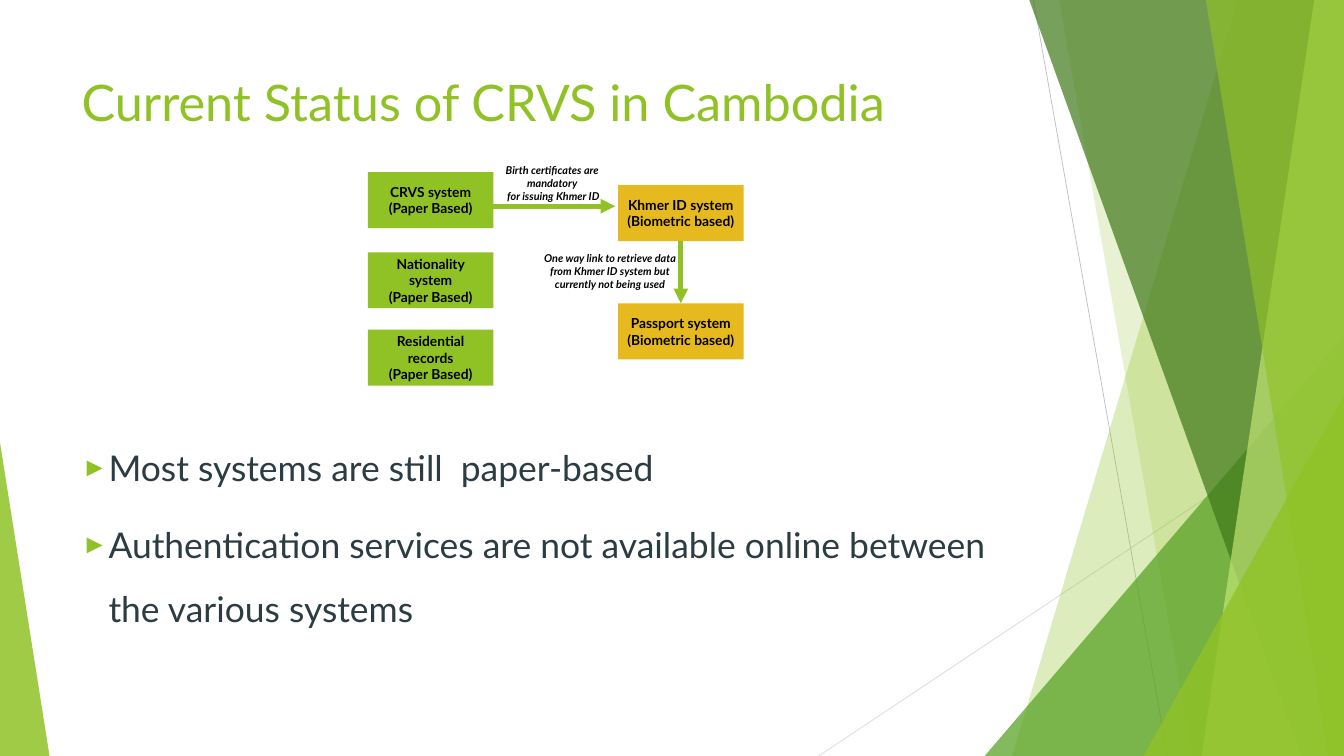
"""Build the slide on the current status of civil registration in Cambodia."""
from dataclasses import dataclass
from lxml import etree
from pptx import Presentation
from pptx import util as u
from pptx.dml.color import RGBColor
from pptx.enum import shapes, text
from pptx.oxml.ns import qn


@dataclass(frozen=True)
class Theme:
    font: str = "Lato"
    green: str = "90C226"
    leaf: str = "54A021"
    moss: str = "3F7819"
    lime: str = "C0E474"
    gold: str = "E6B91E"
    slate: str = "2C3C43"
    black: str = "000000"
    grey: str = "BFBFBF"
    pale: str = "D9D9D9"
    head: float = 51.2
    body: float = 36
    label: float = 14
    note: float = 11
    hair: float = 0.75
    bold: float = 5


class Deck:
    COLS, ROWS = 96, 54

    def __init__(self, deck, theme):
        self.deck, self.theme = deck, theme
        self.slide = deck.slides.add_slide(deck.slide_layouts[1])
        self.items = self.slide.shapes

    def x(self, cols):
        return round(self.deck.slide_width * cols / self.COLS)

    def y(self, rows):
        return round(self.deck.slide_height * rows / self.ROWS)

    def area(self, left, top, width, height):
        return self.x(left), self.y(top), self.x(width), self.y(height)

    def paint(self, shape, tint, alpha=100):
        shape.shadow.inherit = False
        shape.fill.solid()
        shape.fill.fore_color.rgb = RGBColor.from_string(tint)
        shape.line.fill.background()
        if alpha < 100:
            color = shape.fill._xPr.find(".//" + qn("a:srgbClr"))
            etree.SubElement(color, qn("a:alpha"), val=str(alpha * 1000))

    def letter(self, frame, lines, size, tint, align, anchor, bold=False, italic=False):
        frame.word_wrap = True
        frame.auto_size = text.MSO_AUTO_SIZE.NONE
        frame.vertical_anchor = anchor
        for i, line in enumerate(lines):
            para = frame.add_paragraph() if i else frame.paragraphs[0]
            para.alignment = align
            run = para.add_run()
            run.text = line
            font = run.font
            font.name, font.size = self.theme.font, u.Pt(size)
            font.bold, font.italic = bold, italic
            font.color.rgb = RGBColor.from_string(tint)

    def fan(self, top, foot, tint, alpha):
        build = self.items.build_freeform(self.x(top), 0)
        right, base = self.x(self.COLS), self.y(self.ROWS)
        build.add_line_segments([(right, 0), (right, base), (self.x(foot), base)])
        self.paint(build.convert_to_shape(), tint, alpha)

    def wedge(self, left, top, width, peak, tint, alpha):
        kind = shapes.MSO_SHAPE.ISOSCELES_TRIANGLE
        shape = self.items.add_shape(kind, *self.area(left, top, width, self.ROWS - top))
        shape.adjustments[0] = peak
        self.paint(shape, tint, alpha)

    def line(self, start, end, tint, width, arrow=False):
        ends = self.x(start[0]), self.y(start[1]), self.x(end[0]), self.y(end[1])
        link = self.items.add_connector(shapes.MSO_CONNECTOR.STRAIGHT, *ends)
        link.line.color.rgb = RGBColor.from_string(tint)
        link.line.width = u.Pt(width)
        if arrow:
            etree.SubElement(link.line._get_or_add_ln(), qn("a:tailEnd"), type="triangle")
        etree.SubElement(link._element.spPr, qn("a:effectLst"))
        return link

    def box(self, left, top, lines, tint):
        kind = shapes.MSO_SHAPE.RECTANGLE
        shape = self.items.add_shape(kind, *self.area(left, top, 8.96, 4))
        self.paint(shape, tint)
        self.letter(shape.text_frame, lines, self.theme.label, self.theme.black,
                    text.PP_ALIGN.CENTER, text.MSO_ANCHOR.MIDDLE, bold=True)
        return shape

    def note(self, area, lines):
        shape = self.items.add_textbox(*self.area(*area))
        self.letter(shape.text_frame, lines, self.theme.note, self.theme.black,
                    text.PP_ALIGN.CENTER, text.MSO_ANCHOR.MIDDLE, bold=True, italic=True)

    def place(self, index, area, lines, size, tint):
        holder = self.slide.placeholders[index]
        holder.left, holder.top, holder.width, holder.height = self.area(*area)
        self.items._spTree.append(holder._element)
        self.letter(holder.text_frame, lines, size, tint,
                    text.PP_ALIGN.LEFT, text.MSO_ANCHOR.TOP)
        return holder

    def title(self, area, line):
        self.place(0, area, [line], self.theme.head, self.theme.green)

    def list(self, area, lines):
        holder = self.place(1, area, lines, self.theme.body, self.theme.slate)
        indent = u.Inches(0.38)
        for para in holder.text_frame.paragraphs:
            para.line_spacing, para.space_before = 1.5, u.Pt(14.2)
            props = para._p.get_or_add_pPr()
            props.set("marL", str(indent))
            props.set("indent", str(-indent))
            color = etree.SubElement(props, qn("a:buClr"))
            etree.SubElement(color, qn("a:srgbClr"), val=self.theme.green)
            etree.SubElement(props, qn("a:buSzPct"), val="75000")
            etree.SubElement(props, qn("a:buChar"), char="►")


def main():
    theme = Theme()
    deck = Presentation()
    deck.slide_width, deck.slide_height = u.Inches(18.96), u.Inches(10.67)
    page = Deck(deck, theme)

    page.line((73.82, 0), (83.39, 54), theme.grey, theme.hair)
    page.line((96, 29), (58.48, 54), theme.pale, theme.hair)
    page.fan(88.41, 72.3, theme.green, 30)
    page.fan(75.65, 85.16, theme.green, 20)
    page.wedge(70.33, 24, 25.67, 1, theme.leaf, 72)
    page.fan(73.52, 92.96, theme.moss, 70)
    page.fan(93.87, 85.82, theme.lime, 70)
    page.fan(86.13, 94.89, theme.green, 65)
    page.wedge(81.67, 28.25, 14.33, 1, theme.green, 80)
    page.wedge(0, 31.6, 3.54, 0, theme.green, 85)

    page.title((5.32, 4.81, 67.7, 10.37), "Current Status of CRVS in Cambodia")
    page.list((5.32, 30.06, 67.7, 17.51), [
        "Most systems are still  paper-based",
        "Authentication services are not available online between the various systems",
    ])

    paper = [("CRVS system", 12.3), ("Nationality system", 18.02),
             ("Residential records", 23.54)]
    for name, top in paper:
        page.box(26.28, top, [name, "(Paper Based)"], theme.green)
    khmer, passport = [
        page.box(44.15, top, [name, "(Biometric based)"], theme.gold)
        for name, top in [("Khmer ID system", 13.22), ("Passport system", 21.67)]
    ]

    link = page.line((48.63, 17.22), (48.63, 21.67), theme.green, theme.bold, arrow=True)
    link.begin_connect(khmer, 2)
    link.end_connect(passport, 0)
    page.note((38.13, 18.53, 10.89, 1.72), [
        "One way link to retrieve data from Khmer ID system but currently not being used",
    ])
    page.line((34.94, 14.73), (43.95, 14.73), theme.green, theme.bold, arrow=True)
    page.note((35.04, 12.76, 8.81, 0.71), [
        "Birth certificates are mandatory", " for issuing Khmer ID",
    ])

    deck.save("out.pptx")


if __name__ == "__main__":
    main()
